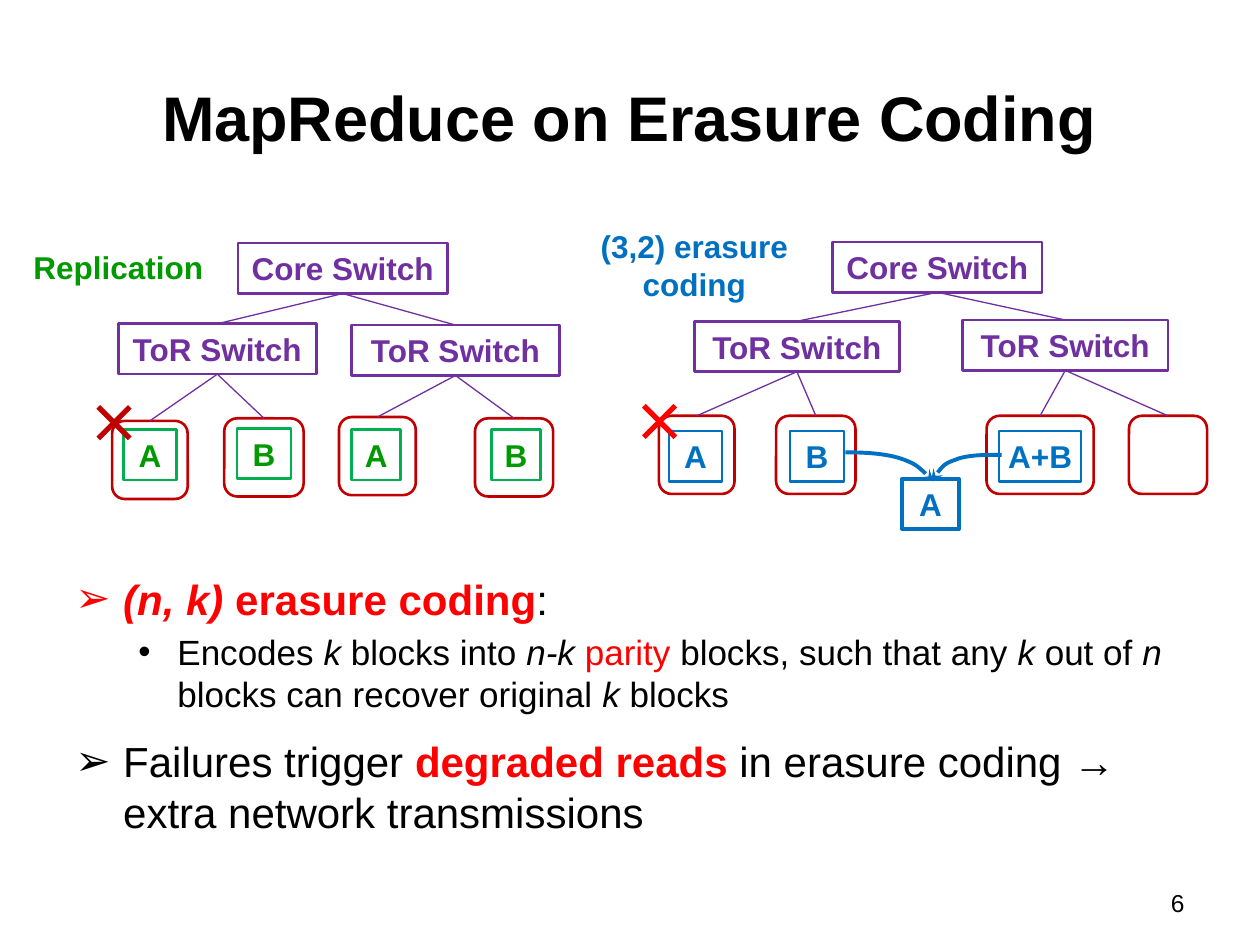
from pptx import Presentation
from pptx.dml.color import RGBColor
from pptx.enum import shapes, text
from pptx.oxml import ns
from pptx.util import Inches, Pt
from lxml import etree

BLACK = RGBColor(0, 0, 0)
RED = RGBColor(0xFF, 0, 0)
DARK_RED = RGBColor(0xC0, 0, 0)
PURPLE = RGBColor(0x70, 0x30, 0xA0)
GREEN = RGBColor(0, 0x99, 0)
BRIGHT_GREEN = RGBColor(0, 0xB0, 0x50)
BLUE = RGBColor(0, 0x70, 0xC0)
FONT = "Arial"
ROW = 0.4    # height of switches and blocks
NODE = 0.62  # height of storage nodes
CROSS = 0.25

TITLE = "MapReduce on Erasure Coding"
PAGE = "6"

# Places are (left, top, width); nodes are listed two per ToR switch.
TREES = [
    dict(label="Replication", label_at=(0.16, 1.92, 1.56, 0.4),
         text_color=GREEN, block_line=BRIGHT_GREEN,
         core=(1.89, 1.93, 1.66),
         tors=[(0.94, 2.57, 1.57), (2.79, 2.58, 1.65)],
         nodes=[(0.89, 3.34, 0.6), (1.78, 3.32, 0.63), (2.69, 3.31, 0.61), (3.77, 3.32, 0.62)],
         blocks=[("A", 0.98, 3.41, 0.42), ("B", 1.88, 3.4, 0.43),
                 ("A", 2.79, 3.41, 0.39), ("B", 3.9, 3.41, 0.39)],
         failure=(0.78, 3.23), failure_color=DARK_RED),
    dict(label="(3,2) erasure coding", label_at=(4.44, 1.75, 2.14, 0.71),
         text_color=BLUE, block_line=BLUE,
         core=(6.61, 1.92, 1.66),
         tors=[(5.51, 2.55, 1.63), (7.64, 2.54, 1.63)],
         nodes=[(5.23, 3.3, 0.6), (6.16, 3.3, 0.63), (7.83, 3.3, 0.85), (8.96, 3.3, 0.62)],
         blocks=[("A", 5.31, 3.42, 0.42), ("B", 6.27, 3.42, 0.43), ("A+B", 7.93, 3.42, 0.65)],
         failure=(5.11, 3.22), failure_color=RED),
]

REBUILT_BLOCK = ("A", 7.16, 3.8, 0.45)
# Each read is a start point followed by two cubic segments.
READS = [
    [(6.71, 3.59), (6.87, 3.59), (7.03, 3.6), (7.15, 3.64), (7.27, 3.68), (7.34, 3.75), (7.41, 3.82)],
    [(7.95, 3.61), (7.81, 3.61), (7.67, 3.61), (7.58, 3.65), (7.49, 3.68), (7.44, 3.75), (7.39, 3.82)],
]

# (bullet, left margin, hanging indent, size, space before, runs of (text, color, bold, italic))
BULLETS = [
    ("➢", 0.38, 0.38, 24, 0, [
        ("(n, k) ", RED, True, True), ("erasure coding", RED, True, False),
        (":", BLACK, False, False)]),
    ("•", 0.81, 0.31, 20, 4, [
        ("Encodes ", BLACK, False, False), ("k", BLACK, False, True),
        (" blocks into ", BLACK, False, False), ("n-k ", BLACK, False, True),
        ("parity", RED, False, False), (" blocks, such that any ", BLACK, False, False),
        ("k", BLACK, False, True), (" out of ", BLACK, False, False),
        ("n", BLACK, False, True), (" blocks can recover original ", BLACK, False, False),
        ("k", BLACK, False, True), (" blocks", BLACK, False, False)]),
    ("➢", 0.38, 0.38, 24, 12, [
        ("Failures trigger ", BLACK, False, False), ("degraded reads", RED, True, False),
        (" in erasure coding → extra network transmissions", BLACK, False, False)]),
]


def style_run(run, size, color, bold=False, italic=False):
    font = run.font
    font.name, font.size, font.bold, font.italic = FONT, Pt(size), bold, italic
    font.color.rgb = color


def write(frame, words, size, color, bold=True, align=text.PP_ALIGN.CENTER):
    frame.text = words
    frame.paragraphs[0].alignment = align
    style_run(frame.paragraphs[0].runs[0], size, color, bold)


def add_textbox(slide, left, top, width, height):
    frame = slide.shapes.add_textbox(*map(Inches, (left, top, width, height))).text_frame
    frame.word_wrap = True
    return frame


def style_outline(outline, color, weight):
    outline.shadow.inherit = False
    outline.fill.background()
    outline.line.color.rgb = color
    outline.line.width = Pt(weight)


def add_outline(slide, preset, place, height, color, weight=1.5):
    left, top, width = place
    outline = slide.shapes.add_shape(preset, *map(Inches, (left, top, width, height)))
    style_outline(outline, color, weight)
    return outline


def add_box(slide, words, place, line_color, text_color, weight=1.5):
    box = add_outline(slide, shapes.MSO_SHAPE.RECTANGLE, place, ROW, line_color, weight)
    frame = box.text_frame
    frame.margin_left = frame.margin_right = 0
    frame.word_wrap = True
    write(frame, words, 18, text_color)
    return box


def add_line(slide, start, end, color, weight):
    line = slide.shapes.add_connector(
        shapes.MSO_CONNECTOR.STRAIGHT, *map(Inches, (*start, *end)))
    line.line.color.rgb = color
    line.line.width = Pt(weight)
    etree.SubElement(line._element.spPr, ns.qn("a:effectLst"))
    return line


def link(slide, parent, child):
    """Join the bottom of the parent to the top of the child."""
    line = add_line(slide, (0, 0), (1, 1), PURPLE, 0.75)
    line.begin_connect(parent, 2)
    line.end_connect(child, 0)


def add_tree(slide, tree):
    core = add_box(slide, "Core Switch", tree["core"], PURPLE, PURPLE)
    tors = [add_box(slide, "ToR Switch", place, PURPLE, PURPLE) for place in tree["tors"]]
    nodes = [add_outline(slide, shapes.MSO_SHAPE.ROUNDED_RECTANGLE, place, NODE, DARK_RED)
             for place in tree["nodes"]]
    for tor in tors:
        link(slide, core, tor)
    for i, node in enumerate(nodes):
        link(slide, tors[i // 2], node)
    for words, *place in tree["blocks"]:
        add_box(slide, words, place, tree["block_line"], tree["text_color"])
    write(add_textbox(slide, *tree["label_at"]), tree["label"], 18, tree["text_color"])
    x, y = tree["failure"]
    for y1, y2 in ((y, y + CROSS), (y + CROSS, y)):
        add_line(slide, (x, y1), (x + CROSS, y2), tree["failure_color"], 3)


def add_read(slide, controls):
    """Draw a curved arrow, turning each three line segments into one cubic."""
    start, *rest = [(Inches(x), Inches(y)) for x, y in controls]
    builder = slide.shapes.build_freeform(*start)
    builder.add_line_segments(rest, close=False)
    curve = builder.convert_to_shape()
    style_outline(curve, BLUE, 2.25)
    segments = list(curve._element.iter(ns.qn("a:lnTo")))
    route = segments[0].getparent()
    for i in range(0, len(segments), 3):
        cubic = etree.SubElement(route, ns.qn("a:cubicBezTo"))
        for segment in segments[i:i + 3]:
            cubic.append(segment[0])
            route.remove(segment)
    outline = curve._element.spPr.find(ns.qn("a:ln"))
    etree.SubElement(outline, ns.qn("a:tailEnd"), type="stealth")


def add_bullets(slide):
    frame = add_textbox(slide, 0.5, 4.5, 9, 2.42)
    for i, (bullet, margin, hanging, size, before, runs) in enumerate(BULLETS):
        paragraph = frame.add_paragraph() if i else frame.paragraphs[0]
        paragraph.space_before = Pt(before)
        props = paragraph._p.get_or_add_pPr()
        props.set("marL", str(Inches(margin)))
        props.set("indent", str(-Inches(hanging)))
        etree.SubElement(props, ns.qn("a:buFont"), typeface=FONT)
        etree.SubElement(props, ns.qn("a:buChar"), char=bullet)
        for words, color, bold, italic in runs:
            run = paragraph.add_run()
            run.text = words
            style_run(run, size, color, bold, italic)


def main():
    deck = Presentation()
    deck.slide_width, deck.slide_height = Inches(10), Inches(7.5)
    slide = deck.slides.add_slide(deck.slide_layouts[5])
    title = slide.shapes.title
    title.left, title.top, title.width, title.height = map(Inches, (0.33, 0.3, 9.33, 1.25))
    write(title.text_frame, TITLE, 36, BLACK)
    add_bullets(slide)
    write(add_textbox(slide, 7.17, 7, 2.33, 0.35), PAGE, 14, BLACK, False, text.PP_ALIGN.RIGHT)
    for tree in TREES:
        add_tree(slide, tree)
    for controls in READS:
        add_read(slide, controls)
    words, *place = REBUILT_BLOCK
    add_box(slide, words, place, BLUE, BLUE, 2.25)
    deck.save("out.pptx")


if __name__ == "__main__":
    main()
